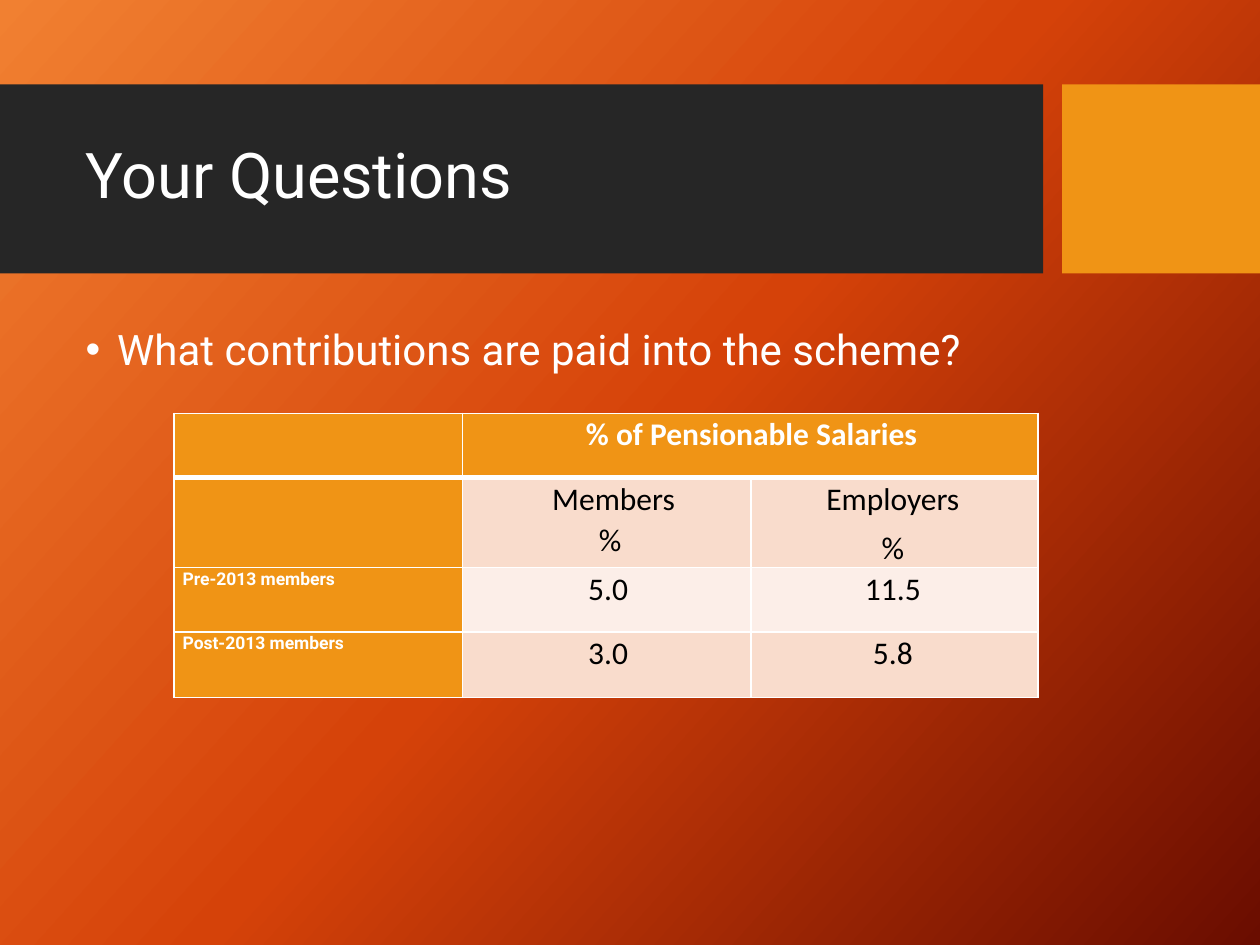
from lxml.etree import SubElement
from pptx import Presentation
from pptx.dml.color import RGBColor
from pptx.enum.shapes import MSO_SHAPE
from pptx.enum.text import MSO_ANCHOR, MSO_AUTO_SIZE, PP_ALIGN
from pptx.oxml import parse_xml
from pptx.oxml.ns import nsdecls, qn
from pptx.util import Inches, Pt

WHITE = RGBColor(0xFF, 0xFF, 0xFF)
BLACK = RGBColor(0, 0, 0)
CHARCOAL = RGBColor(0x26, 0x26, 0x26)
AMBER = RGBColor(0xF0, 0x94, 0x15)
PEACH = RGBColor(0xF9, 0xDC, 0xCC)
PALE_PEACH = RGBColor(0xFC, 0xEE, 0xE8)
GRADIENT = {0: RGBColor(0xF1, 0x80, 0x31), 50: RGBColor(0xD5, 0x42, 0x09),
            100: RGBColor(0x6A, 0x0D, 0x00)}

TITLE = dict(name="Roboto", size=Pt(36), color=WHITE)
BULLET = dict(name="Roboto", size=Pt(24), color=WHITE)
HEADING = dict(name="Calibri", size=Pt(18), color=WHITE, bold=True)
FIGURE = dict(name="Calibri", size=Pt(18), color=BLACK, bold=False)
ROW_LABEL = dict(name="Roboto", size=Pt(10), color=WHITE, bold=True)


def style_font(font, style):
    for key, value in style.items():
        if key == "color":
            font.color.rgb = value
        else:
            setattr(font, key, value)


def indent(para, left, hanging=0, right=0):
    props = para._p.get_or_add_pPr()
    for key, value in dict(marL=left, indent=-hanging, marR=right).items():
        props.set(key, str(Inches(value)))


class SlideBuilder:
    def __init__(self, deck):
        self.page = deck.slides.add_slide(deck.slide_layouts[1])

    def background(self, stops, clockwise_angle):
        fill = self.page.background.fill
        fill.gradient()
        fill.gradient_angle = 360 - clockwise_angle
        stop_list = self.page.element.find(".//" + qn("a:gsLst"))
        for stop in list(stop_list):
            stop_list.remove(stop)
        for percent, color in stops.items():
            stop = SubElement(stop_list, qn("a:gs"), pos=str(percent * 1000))
            SubElement(stop, qn("a:srgbClr"), val=str(color))

    def band(self, left, width, color):
        """Add a title band behind the placeholders."""
        box = self.page.shapes.add_shape(
            MSO_SHAPE.RECTANGLE, Inches(left), Inches(0.67), Inches(width), Inches(1.5))
        box.shadow.inherit = False
        box.fill.solid()
        box.fill.fore_color.rgb = color
        box.line.fill.background()
        self.page.shapes.title.element.addprevious(box.element)

    def placeholder(self, index, place, text, style, anchor):
        box = self.page.placeholders[index]
        box.left, box.top, box.width, box.height = map(Inches, place)
        frame = box.text_frame
        frame.auto_size = MSO_AUTO_SIZE.NONE
        frame.vertical_anchor = anchor
        para = frame.paragraphs[0]
        para.alignment = PP_ALIGN.LEFT
        para.line_spacing = 0.9
        para.space_before = Pt(0)
        para.add_run().text = text
        style_font(para.runs[0].font, style)
        return para

    def bullet(self, para):
        indent(para, 0.25, hanging=0.25)
        props = para._p.get_or_add_pPr()
        SubElement(props, qn("a:buFont"), typeface="Arial")
        SubElement(props, qn("a:buChar"), char="•")

    def table(self, place, columns, rows):
        frame = self.page.shapes.add_table(len(rows), len(columns), *map(Inches, place))
        table = frame.table
        table.horz_banding = False
        for column, width in zip(table.columns, columns):
            column.width = Inches(width)
        for row, height in zip(table.rows, rows):
            row.height = Inches(height)
        return table

    def borders(self, cell, **widths):
        props = cell._tc.get_or_add_tcPr()
        for side in "LRTB":
            props.append(parse_xml(
                f'<a:ln{side} {nsdecls("a")} w="{Pt(widths.get(side, 1))}"><a:solidFill>'
                f'<a:srgbClr val="{WHITE}"/></a:solidFill></a:ln{side}>'))

    def cell_text(self, cell, lines, style, left, right=0, align=PP_ALIGN.CENTER):
        cell.margin_left, cell.margin_right = Inches(0.01), Inches(0.08)
        cell.margin_top = cell.margin_bottom = 0
        frame = cell.text_frame
        for number, line in enumerate(lines):
            para = frame.add_paragraph() if number else frame.paragraphs[0]
            para.alignment = align
            para.line_spacing = 1.07
            if number < len(lines) - 1:
                para.space_after = Pt(4.5)
            indent(para, left, right=right)
            para.add_run().text = line
            style_font(para.runs[0].font, style)


def main():
    deck = Presentation()
    deck.slide_width, deck.slide_height = Inches(10), Inches(7.5)
    builder = SlideBuilder(deck)
    builder.background(GRADIENT, 42)
    builder.band(0, 8.28, CHARCOAL)
    builder.band(8.43, 1.57, AMBER)
    builder.placeholder(0, (0.58, 0.82, 7.54, 1.18), "Your Questions", TITLE,
                        MSO_ANCHOR.MIDDLE)
    question = builder.placeholder(
        1, (0.58, 2.56, 7.53, 3.94), "What contributions are paid into the scheme?",
        BULLET, MSO_ANCHOR.TOP)
    builder.bullet(question)

    table = builder.table((1.38, 3.28, 6.86, 2.25), (2.29, 2.29, 2.28),
                          (0.51, 0.71, 0.51, 0.52))
    row_fills = (AMBER, PEACH, PALE_PEACH, PEACH)
    for row, row_fill in enumerate(row_fills):
        for column in range(3):
            cell = table.cell(row, column)
            builder.borders(cell, **{0: {"B": 3}, 1: {"T": 3}}.get(row, {}))
            cell.fill.solid()
            cell.fill.fore_color.rgb = row_fill if column else AMBER
    table.cell(0, 1).merge(table.cell(0, 2))

    builder.cell_text(table.cell(0, 1), ["% of Pensionable Salaries "], HEADING, 0.15)
    builder.cell_text(table.cell(1, 1), ["Members % "], FIGURE, 0.64, right=0.46)
    builder.cell_text(table.cell(1, 2), ["Employers ", "% "], FIGURE, 0.1)
    rates = (("Pre-2013 members", "5.0 ", "11.5 "), ("Post-2013 members", "3.0 ", "5.8 "))
    for row, (label, members, employers) in enumerate(rates, start=2):
        builder.cell_text(table.cell(row, 0), [label], ROW_LABEL, 0.06,
                          align=PP_ALIGN.LEFT)
        builder.cell_text(table.cell(row, 1), [members], FIGURE, 0.15)
        builder.cell_text(table.cell(row, 2), [employers], FIGURE, 0.1)

    deck.save("out.pptx")


if __name__ == "__main__":
    main()
